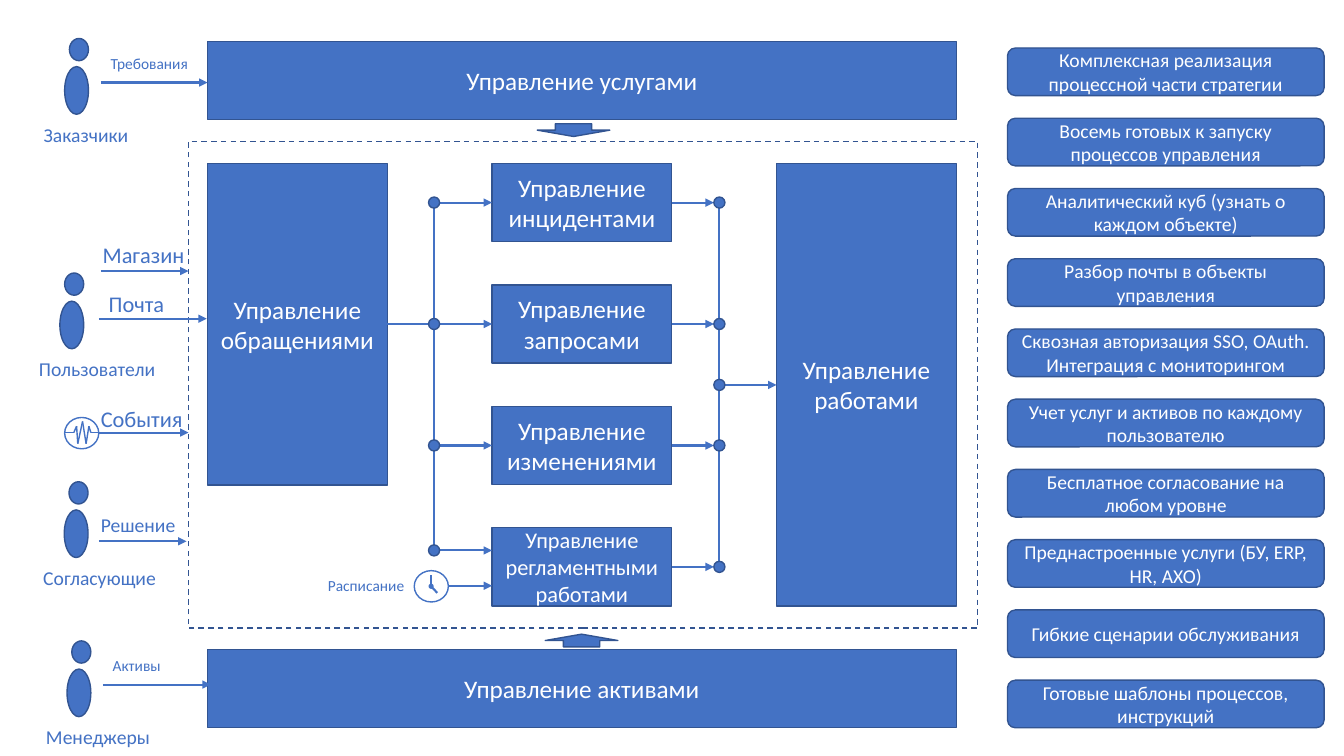
"""Builds the slide with the service management process diagram."""
from dataclasses import dataclass
from itertools import pairwise

from lxml.etree import SubElement
from pptx import Presentation
from pptx.dml.color import RGBColor
from pptx.enum.dml import MSO_LINE_DASH_STYLE as Dash
from pptx.enum.shapes import MSO_AUTO_SHAPE_TYPE as Form, MSO_CONNECTOR_TYPE as Connector
from pptx.enum.text import MSO_ANCHOR as Anchor, MSO_AUTO_SIZE as AutoSize, PP_ALIGN as Align
from pptx.oxml.ns import qn
from pptx.util import Cm, Pt

COLOURS = {"fill": "4472C4", "outline": "325491", "light": "FFFFFF"}
FONT = "Calibri"
BOX_WIDTH, BOX_HEIGHT = 4.53, 1.97
REQUESTS_X, PROCESS_X, WORK_X = 5.23, 12.4, 19.57
PROCESS_TOP, PROCESS_STEP = 4.12, 3.06
DOT = 0.28
LEFT_BUS, RIGHT_BUS = 10.94, 18.13
SCHEDULED_START, WORK_ENTRY = 13.87, 9.7


@dataclass(frozen=True)
class Box:
    left: float
    top: float
    width: float
    height: float
    text: str = ""
    size: float = 18
    form: Form = Form.RECTANGLE
    fill: str | None = "fill"
    outline: str | None = "outline"
    dashed: bool = False
    rotation: float = 0


@dataclass(frozen=True)
class Label:
    text: str
    left: float
    top: float
    width: float
    size: float
    align: Align = Align.LEFT


@dataclass(frozen=True)
class Line:
    start: tuple[float, float]
    end: tuple[float, float]
    weight: float = 1.5
    arrow: bool = False


@dataclass(frozen=True)
class Person:
    caption: str
    left: float
    top: float


@dataclass(frozen=True)
class Flow:
    label: Label
    start: float
    end: float
    level: float


PROCESSES = [
    ("Управление инцидентами", 18),
    ("Управление запросами", 18),
    ("Управление изменениями", 18),
    ("Управление регламентными работами", 16),
]
BENEFITS = [
    "Комплексная реализация процессной части стратегии",
    "Восемь готовых к запуску процессов управления",
    "Аналитический куб (узнать о каждом объекте)",
    "Разбор почты в объекты управления",
    "Сквозная авторизация SSO, OAuth. Интеграция с мониторингом",
    "Учет услуг и активов по каждому пользователю",
    "Бесплатное согласование на любом уровне",
    "Преднастроенные услуги (БУ, ERP, HR, АХО)",
    "Гибкие сценарии обслуживания",
    "Готовые шаблоны процессов, инструкций",
]
MAIN_BOXES = [
    Box(REQUESTS_X, PROCESS_TOP, BOX_WIDTH, 8.1, "Управление обращениями"),
    Box(WORK_X, PROCESS_TOP, BOX_WIDTH, 11.15, "Управление работами"),
    Box(REQUESTS_X, 1.04, 18.87, BOX_HEIGHT, "Управление услугами"),
    Box(REQUESTS_X, 16.36, 18.87, BOX_HEIGHT, "Управление активами"),
    Box(4.75, 3.56, 19.89, 12.27, fill=None, dashed=True),
    Box(13.54, 3.12, 1.83, 0.32, form=Form.DOWN_ARROW),
    Box(13.74, 15.98, 1.83, 0.32, form=Form.DOWN_ARROW, rotation=180),
]
PEOPLE = [
    Person("Заказчики", 1.75, 0.97),
    Person("Пользователи", 1.63, 6.88),
    Person("Согласующие", 1.74, 12.14),
    Person("Менеджеры", 1.81, 16.15),
]
FLOWS = [
    Flow(Label("Требования", 2.54, 1.24, 2.57, 11), 2.54, 5.23, 2.08),
    Flow(Label("Магазин", 2.34, 5.94, 2.8, 16), 2.54, 4.75, 6.83),
    Flow(Label("Почта", 2.49, 7.19, 2.57, 16), 2.49, 5.21, 8.03),
    Flow(Label("События", 2.29, 10.08, 2.8, 16), 2.49, 4.75, 10.9),
    Flow(Label("Решение", 2.29, 12.8, 2.57, 14), 2.49, 4.7, 13.64),
    Flow(Label("Активы", 2.59, 16.41, 2.57, 11), 2.59, 5.31, 17.25),
    Flow(Label("Расписание", 7.87, 14.4, 2.57, 11, Align.RIGHT), 11.3, PROCESS_X, 14.76),
]
PULSE = [
    (1.63, 10.9), (1.86, 10.9), (1.93, 10.74), (1.96, 11.18), (2.08, 10.62),
    (2.17, 11.18), (2.24, 10.74), (2.29, 10.9), (2.49, 10.9),
]


def colour(name: str) -> RGBColor:
    """Return the palette colour with this name."""
    return RGBColor.from_string(COLOURS[name])


def write(frame, text: str, size: float, ink: str, align: Align) -> None:
    """Put one formatted run into a text frame."""
    frame.word_wrap = True
    paragraph = frame.paragraphs[0]
    paragraph.alignment = align
    run = paragraph.add_run()
    run.text = text
    run.font.name = FONT
    run.font.size = Pt(size)
    run.font.color.rgb = colour(ink)


def draw_box(slide, box: Box) -> None:
    """Draw a preset shape with optional centred text."""
    shape = slide.shapes.add_shape(box.form, Cm(box.left), Cm(box.top), Cm(box.width), Cm(box.height))
    shape.shadow.inherit = False
    shape.rotation = box.rotation
    if box.fill:
        shape.fill.solid()
        shape.fill.fore_color.rgb = colour(box.fill)
    else:
        shape.fill.background()
    if box.outline:
        shape.line.color.rgb = colour(box.outline)
        shape.line.width = Pt(1)
    else:
        shape.line.fill.background()
    if box.dashed:
        shape.line.dash_style = Dash.DASH
    if box.text:
        shape.text_frame.vertical_anchor = Anchor.MIDDLE
        write(shape.text_frame, box.text, box.size, "light", Align.CENTER)


def draw_label(slide, label: Label) -> None:
    """Draw a caption that grows with its text."""
    shape = slide.shapes.add_textbox(Cm(label.left), Cm(label.top), Cm(label.width), Cm(0.9))
    write(shape.text_frame, label.text, label.size, "fill", label.align)
    shape.text_frame.auto_size = AutoSize.SHAPE_TO_FIT_TEXT


def draw_line(slide, line: Line) -> None:
    """Draw a straight line, with an arrowhead if asked."""
    points = [Cm(value) for value in (*line.start, *line.end)]
    connector = slide.shapes.add_connector(Connector.STRAIGHT, *points)
    connector.line.color.rgb = colour("fill")
    connector.line.width = Pt(line.weight)
    properties = connector._element.spPr
    if line.arrow:
        SubElement(properties.find(qn("a:ln")), qn("a:tailEnd"), type="triangle")
    SubElement(properties, qn("a:effectLst"))


def draw_person(slide, person: Person) -> None:
    """Draw a head, a body and a caption."""
    draw_box(slide, Box(person.left, person.top, 0.48, 0.56, form=Form.OVAL))
    draw_box(slide, Box(person.left - 0.12, person.top + 0.71, 0.6, 1.2, form=Form.OVAL))
    draw_label(slide, Label(person.caption, person.left - 0.9, person.top + 2, 3.6, 14))


def draw_bus(slide, centre: float, levels: list[float]) -> None:
    """Draw a vertical chain of dots joined by lines."""
    for upper, lower in pairwise(levels):
        draw_line(slide, Line((centre, upper + DOT / 2), (centre, lower - DOT / 2)))
    for level in levels:
        draw_box(slide, Box(centre - DOT / 2, level - DOT / 2, DOT, DOT, form=Form.OVAL))


def draw_processes(slide) -> None:
    """Draw the process boxes and the links on both sides."""
    levels = []
    for index, (text, size) in enumerate(PROCESSES):
        top = PROCESS_TOP + index * PROCESS_STEP
        levels.append(top + BOX_HEIGHT / 2)
        draw_box(slide, Box(PROCESS_X, top, BOX_WIDTH, BOX_HEIGHT, text, size))
    starts = [*levels[:-1], SCHEDULED_START]
    for start, level in zip(starts, levels):
        draw_line(slide, Line((LEFT_BUS + DOT / 2, start), (PROCESS_X, start), arrow=True))
        draw_line(slide, Line((PROCESS_X + BOX_WIDTH, level), (RIGHT_BUS - DOT / 2, level), arrow=True))
    draw_line(slide, Line((REQUESTS_X + BOX_WIDTH, levels[1]), (LEFT_BUS - DOT / 2, levels[1])))
    draw_line(slide, Line((RIGHT_BUS + DOT / 2, WORK_ENTRY), (WORK_X, WORK_ENTRY), arrow=True))
    draw_bus(slide, LEFT_BUS, starts)
    draw_bus(slide, RIGHT_BUS, sorted([*levels, WORK_ENTRY]))


def draw_icons(slide) -> None:
    """Draw the schedule clock and the monitoring pulse."""
    for left, top in ((10.44, 14.38), (1.63, 10.52)):
        draw_box(slide, Box(left, top, 0.86, 0.79, form=Form.OVAL, fill=None, outline="fill"))
    for tip in ((10.87, 14.48), (11.02, 14.94)):
        draw_line(slide, Line((10.87, 14.78), tip))
    draw_box(slide, Box(10.8, 14.71, 0.13, 0.13, form=Form.OVAL, outline=None))
    for start, end in pairwise(PULSE):
        draw_line(slide, Line(start, end, weight=1))


def main() -> None:
    """Build the presentation and save it."""
    presentation = Presentation()
    presentation.slide_width, presentation.slide_height = Cm(33.87), Cm(19.05)
    slide = presentation.slides.add_slide(presentation.slide_layouts[6])
    for box in MAIN_BOXES:
        draw_box(slide, box)
    draw_processes(slide)
    draw_icons(slide)
    for person in PEOPLE:
        draw_person(slide, person)
    for flow in FLOWS:
        draw_line(slide, Line((flow.start, flow.level), (flow.end, flow.level), arrow=True))
        draw_label(slide, flow.label)
    for index, text in enumerate(BENEFITS):
        draw_box(slide, Box(25.39, 1.21 + 1.77 * index, 7.98, 1.2, text, 14, Form.ROUNDED_RECTANGLE))
    presentation.save("out.pptx")


if __name__ == "__main__":
    main()
